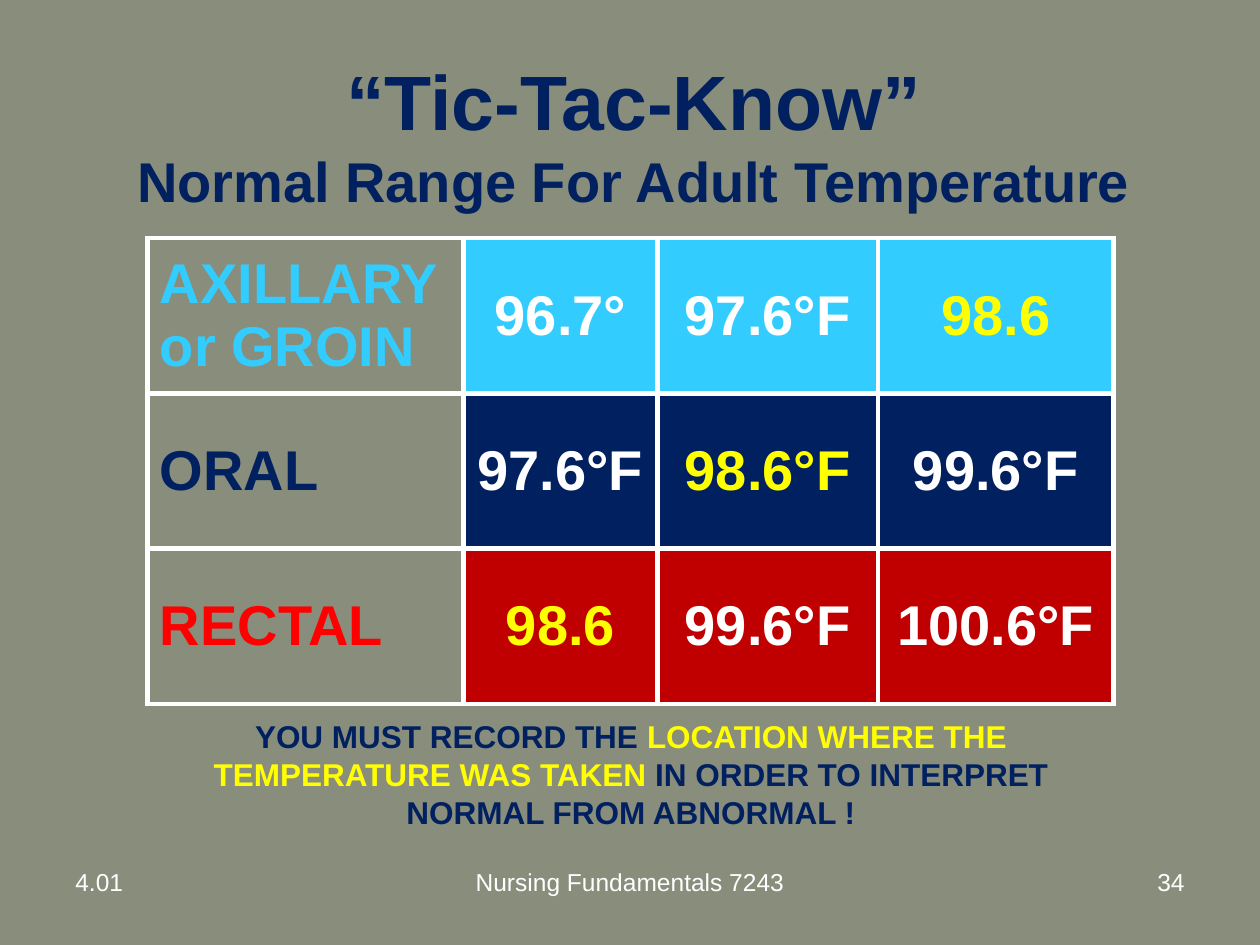
"""Build the slide on normal adult temperature ranges."""
from dataclasses import dataclass

from lxml.etree import SubElement as Sub
from pptx import Presentation
from pptx.dml.color import RGBColor as RGB
from pptx.enum.text import MSO_ANCHOR as Anchor, PP_ALIGN as Align
from pptx.oxml.ns import qn
from pptx.util import Cm, Pt


@dataclass(frozen=True)
class Theme:
    font: str = "Arial"
    back: str = "898D7B"
    navy: str = "002060"
    sky: str = "33CCFF"
    red: str = "FF0000"
    dark: str = "C00000"
    gold: str = "FFFF00"
    white: str = "FFFFFF"
    head: int = 44
    large: int = 32
    body: int = 18
    small: int = 14
    rule: int = 3


theme = Theme()


def style(run, size, color, bold=True):
    run.font.name = theme.font
    run.font.size = Pt(size)
    run.font.bold = bold
    run.font.color.rgb = RGB.from_string(color)


def add_box(left, top, width, height, anchor=Anchor.TOP):
    box = slide.shapes.add_textbox(Cm(left), Cm(top), Cm(width), Cm(height))
    frame = box.text_frame
    frame.word_wrap = True
    frame.vertical_anchor = anchor
    return frame


deck = Presentation()
deck.slide_width, deck.slide_height = Cm(25.4), Cm(19.05)
slide = deck.slides.add_slide(deck.slide_layouts[6])
slide.background.fill.solid()
slide.background.fill.fore_color.rgb = RGB.from_string(theme.back)

title = add_box(1.35, 0.84, 22.86, 3.71, Anchor.MIDDLE)
title.text = "“Tic-Tac-Know”\nNormal Range For Adult Temperature"
for para, size in zip(title.paragraphs, (theme.head, theme.large)):
    para.alignment = Align.CENTER
    style(para.runs[0], size, theme.navy)

rows = [
    (("AXILLARY or GROIN", "96.7°", "97.6°F", "98.6"), theme.sky, theme.sky),
    (("ORAL", "97.6°F", "98.6°F", "99.6°F"), theme.navy, theme.navy),
    (("RECTAL", "98.6", "99.6°F", "100.6°F"), theme.red, theme.dark),
]
widths = (6.38, 3.9, 4.45, 4.75)
high = 3.13
grid = slide.shapes.add_table(
    len(rows), len(widths), Cm(2.97), Cm(4.8), Cm(sum(widths)), Cm(high * len(rows))
).table
grid.first_row = grid.horz_banding = False
for col, width in zip(grid.columns, widths):
    col.width = Cm(width)

for r, (words, label, fill) in enumerate(rows):
    grid.rows[r].height = Cm(high)
    for c, word in enumerate(words):
        cell = grid.cell(r, c)
        cell.vertical_anchor = Anchor.MIDDLE
        props = cell._tc.get_or_add_tcPr()
        for side in ("lnL", "lnR", "lnT", "lnB"):
            line = Sub(props, qn(f"a:{side}"), w=str(Pt(theme.rule)))
            Sub(Sub(line, qn("a:solidFill")), qn("a:srgbClr"), val=theme.white)
        cell.text_frame.text = word
        para = cell.text_frame.paragraphs[0]
        if c == 0:
            cell.fill.background()
            color = label
        else:
            cell.fill.solid()
            cell.fill.fore_color.rgb = RGB.from_string(fill)
            para.alignment = Align.CENTER
            color = theme.gold if word.startswith("98.6") else theme.white
        style(para.runs[0], theme.large, color)

note = add_box(3.5, 14.33, 18.44, 2.57).paragraphs[0]
note.alignment = Align.CENTER
for text, color in (
    ("YOU MUST RECORD THE ", theme.navy),
    ("LOCATION WHERE THE TEMPERATURE WAS TAKEN", theme.gold),
    (" IN ORDER TO INTERPRET NORMAL FROM ABNORMAL !", theme.navy),
):
    run = note.add_run()
    run.text = text
    style(run, theme.body, color)

for text, left, width, align in (
    ("4.01", 1.27, 5.92, Align.LEFT),
    ("Nursing Fundamentals 7243", 8.68, 8.04, Align.CENTER),
    ("34", 18.21, 5.92, Align.RIGHT),
):
    foot = add_box(left, 17.35, width, 1.32).paragraphs[0]
    foot.text = text
    foot.alignment = align
    style(foot.runs[0], theme.small, theme.white, False)

deck.save("out.pptx")
